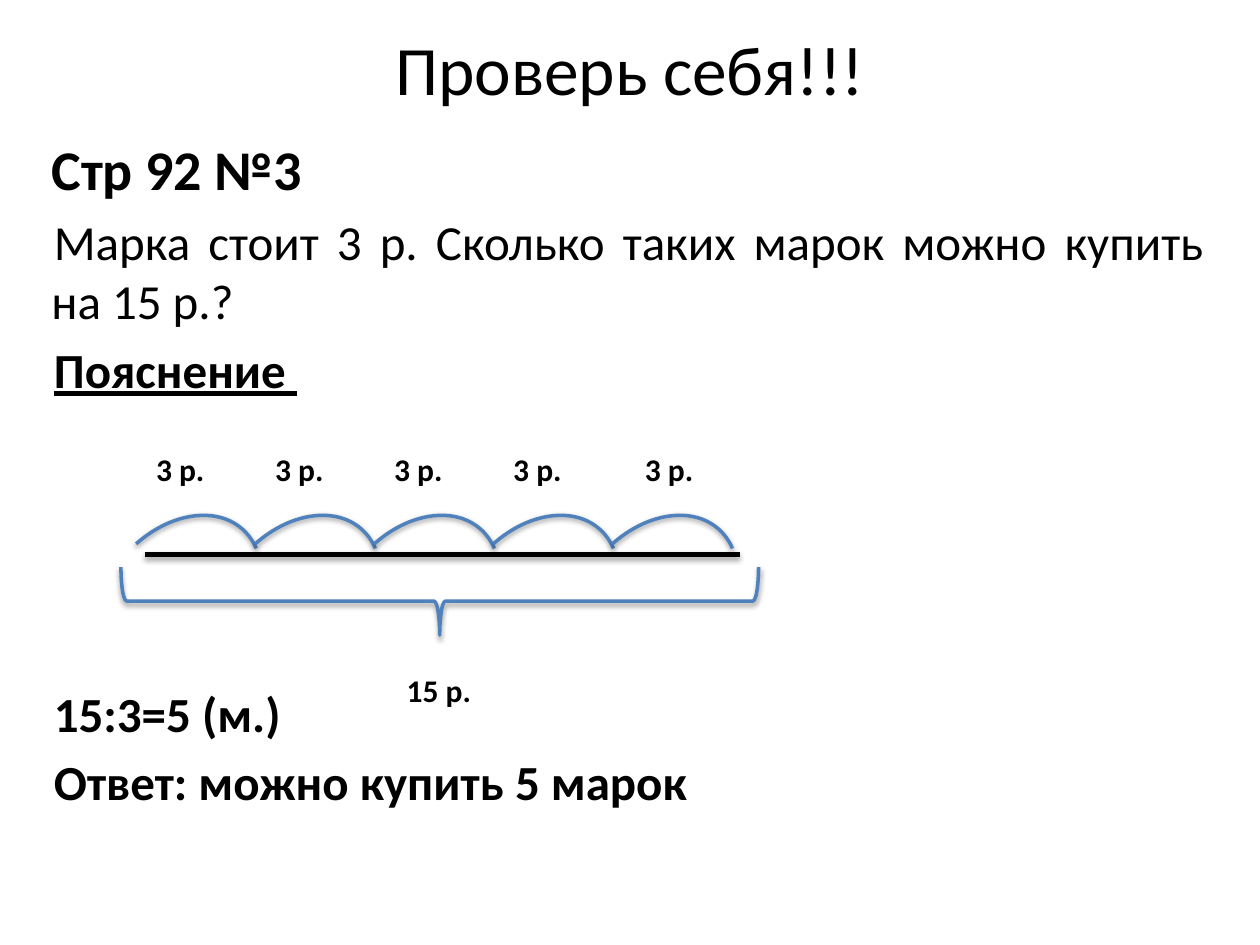
"""Build a slide that checks a division problem with a segment diagram."""
from dataclasses import dataclass

from lxml import etree
from pptx import Presentation
from pptx.dml.color import RGBColor
from pptx.enum.shapes import MSO_CONNECTOR, MSO_SHAPE
from pptx.enum.text import MSO_ANCHOR, PP_ALIGN
from pptx.oxml.ns import qn
from pptx.util import Inches, Pt

ARC, BRACE = MSO_SHAPE.ARC, MSO_SHAPE.LEFT_BRACE
STRAIGHT = MSO_CONNECTOR.STRAIGHT
MIDDLE, TOP = MSO_ANCHOR.MIDDLE, MSO_ANCHOR.TOP
LEFT, CENTER, JUSTIFY = PP_ALIGN.LEFT, PP_ALIGN.CENTER, PP_ALIGN.JUSTIFY
WIDTH, HEIGHT = Inches(10), Inches(7.5)
STAMPS, STEP = 5, 9.45


@dataclass(frozen=True)
class Theme:
    """Colours, font and type sizes of the slide."""
    ink: RGBColor = RGBColor(0, 0, 0)
    accent: RGBColor = RGBColor(0x4F, 0x81, 0xBD)
    font: str = "Calibri"
    title: float = 39.6
    heading: float = 32
    body: float = 28
    label: float = 18


THEME = Theme()


def place(left, top, width, height):
    """Turn percentages of the slide into lengths."""
    return [int(share * side / 100) for share, side in
            zip((left, top, width, height), (WIDTH, HEIGHT) * 2)]


def write(para, text, size, bold=False, align=LEFT):
    """Fill one paragraph with uniformly styled text."""
    para.text = text
    para.alignment = align
    para.font.name, para.font.size, para.font.bold = THEME.font, Pt(size), bold
    para.font.color.rgb = THEME.ink


def add_box(shapes, bounds, anchor=TOP):
    """Add a wrapping text box and return its frame."""
    frame = shapes.add_textbox(*place(*bounds)).text_frame
    frame.word_wrap = True
    frame.vertical_anchor = anchor
    return frame


def add_label(shapes, text, *bounds):
    """Add a bold diagram label."""
    write(add_box(shapes, bounds).paragraphs[0], text, THEME.label, True)


def style_line(shape, color, width, opacity, distance):
    """Set the outline of a shape and a soft shadow below it."""
    shape.line.color.rgb = color
    shape.line.width = Pt(width)
    effects = etree.SubElement(shape.element.spPr, qn("a:effectLst"))
    shadow = etree.SubElement(
        effects, qn("a:outerShdw"), blurRad=str(Pt(3.1)),
        dist=str(Pt(distance)), dir="5400000", rotWithShape="0")
    tint = etree.SubElement(shadow, qn("a:srgbClr"), val=str(THEME.ink))
    etree.SubElement(tint, qn("a:alpha"), val=str(opacity * 1000))


def add_curve(shapes, kind, rotation, *bounds):
    """Add an unfilled, rotated outline shape."""
    curve = shapes.add_shape(kind, *place(*bounds))
    curve.rotation = rotation
    curve.fill.background()
    style_line(curve, THEME.accent, 2, 38, 1.6)
    return curve


def add_solution(shapes):
    """Add the task, its explanation heading and the answer."""
    frame = add_box(shapes, (3.1, 13.6, 93.4, 75.73))
    write(frame.paragraphs[0], "Стр 92 №3", THEME.heading, True)
    lines = (
        ("Марка стоит 3 р. Сколько таких марок можно купить на 15 р.?", False, 5.6),
        ("Пояснение ", True, 5.6),
        ("15:3=5 (м.) ", True, 163),
        ("Ответ: можно купить 5 марок", True, 5.6),
    )
    for text, bold, gap in lines:
        para = frame.add_paragraph()
        write(para, text, THEME.body, bold, JUSTIFY)
        para.space_before = Pt(gap)
        para._p.get_or_add_pPr().set("indent", str(Inches(0.02)))
    frame.paragraphs[2].font.underline = True


def add_diagram(shapes):
    """Add the segment with an arc for each stamp and a brace for the total."""
    for index in range(STAMPS):
        offset = index * STEP
        arc = add_curve(shapes, ARC, 310.9, 6.3 + offset, 56.27, 15.6, 15.07)
        arc.adjustments[0], arc.adjustments[1] = 170.43, 8.58
        nudge = 1 if index == STAMPS - 1 else 0
        add_label(shapes, "3 р.", 11.4 + offset + nudge, 46.93, 8, 6.8)
    segment = shapes.add_connector(STRAIGHT, *place(11.5, 58.67, 58.7, 58.67))
    style_line(segment, THEME.ink, 3, 35, 1.8)
    add_curve(shapes, BRACE, 270, 32.2, 29.87, 5.4, 67.47)
    add_label(shapes, "15 р.", 31.3, 70.4, 11.3, 6.8)


def main():
    """Create and save the slide."""
    deck = Presentation()
    deck.slide_width, deck.slide_height = WIDTH, HEIGHT
    page = deck.slides.add_slide(deck.slide_layouts[6])
    title = add_box(page.shapes, (5, 4, 90, 6.4), MIDDLE)
    write(title.paragraphs[0], "Проверь себя!!!", THEME.title, align=CENTER)
    add_solution(page.shapes)
    add_diagram(page.shapes.add_group_shape().shapes)
    deck.save("out.pptx")


if __name__ == "__main__":
    main()
